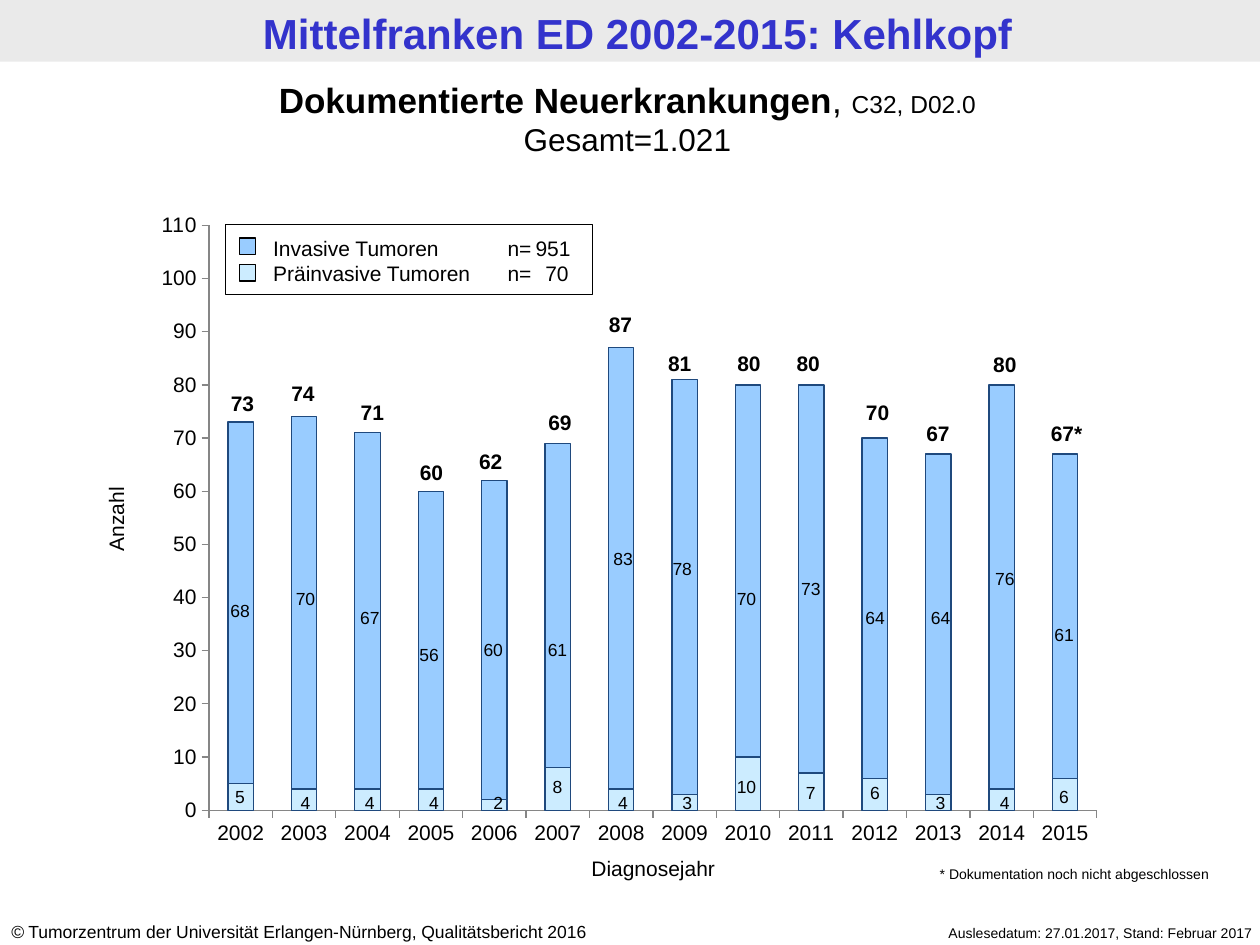
from lxml import etree
from pptx import Presentation
from pptx.chart.data import CategoryChartData
from pptx.dml.color import RGBColor
from pptx.enum.chart import XL_CHART_TYPE, XL_TICK_MARK
from pptx.enum.shapes import MSO_SHAPE
from pptx.enum.text import MSO_ANCHOR, PP_ALIGN
from pptx.oxml import parse_xml
from pptx.oxml.ns import nsdecls, qn
from pptx.util import Inches, Pt

STACKED = XL_CHART_TYPE.COLUMN_STACKED
OUT = XL_TICK_MARK.OUTSIDE
RECT = MSO_SHAPE.RECTANGLE
TOP, BOTTOM = MSO_ANCHOR.TOP, MSO_ANCHOR.BOTTOM
LEFT, MID, RIGHT = PP_ALIGN.LEFT, PP_ALIGN.CENTER, PP_ALIGN.RIGHT

FONT = "Arial"
BLACK = RGBColor(0x00, 0x00, 0x00)
BLUE = RGBColor(0x33, 0x33, 0xCC)
BAND = RGBColor(0xEA, 0xEA, 0xEA)
NAVY = RGBColor(0x1F, 0x49, 0x7D)
GREY = RGBColor(0x86, 0x86, 0x86)
SKY = RGBColor(0x99, 0xCC, 0xFF)
PALE = RGBColor(0xCC, 0xEC, 0xFF)

# Preinvasive and invasive counts, total, then (left, top) of their labels
YEARS = {
    2002: (5, 68, "73", (1.69, 6.19), (1.69, 4.71), (1.61, 3.05)),
    2003: (4, 70, "74", (2.21, 6.24), (2.21, 4.62), (2.09, 2.97)),
    2004: (4, 67, "71", (2.72, 6.24), (2.72, 4.77), (2.64, 3.12)),
    2005: (4, 56, "60", (3.23, 6.24), (3.19, 5.06), (3.11, 3.60)),
    2006: (2, 60, "62", (3.74, 6.24), (3.70, 5.02), (3.58, 3.51)),
    2007: (8, 61, "69", (4.21, 6.11), (4.21, 5.02), (4.13, 3.20)),
    2008: (4, 83, "87", (4.73, 6.24), (4.73, 4.30), (4.61, 2.42)),
    2009: (3, 78, "81", (5.24, 6.24), (5.20, 4.38), (5.08, 2.73)),
    2010: (10, 70, "80", (5.71, 6.11), (5.71, 4.62), (5.63, 2.73)),
    2011: (7, 73, "80", (6.22, 6.16), (6.22, 4.54), (6.10, 2.73)),
    2012: (6, 64, "70", (6.73, 6.16), (6.73, 4.77), (6.65, 3.12)),
    2013: (3, 64, "67", (7.25, 6.24), (7.25, 4.77), (7.13, 3.29)),
    2014: (4, 76, "80", (7.76, 6.24), (7.76, 4.46), (7.66, 2.74)),
    2015: (6, 61, "67*", (8.23, 6.19), (8.23, 4.90), (8.15, 3.29)),
}


def inches(*nums):
    return [Inches(n) for n in nums]


def set_tabs(para, stops):
    tabs = etree.SubElement(para._p.get_or_add_pPr(), qn("a:tabLst"))
    for pos, side in stops:
        etree.SubElement(tabs, qn("a:tab"), pos=str(Inches(pos)), algn=side)


def write(para, text, size=12, bold=False, italic=False, color=BLACK,
          align=LEFT, tabs=()):
    """Add a formatted run to a paragraph."""
    para.alignment = align
    if tabs:
        set_tabs(para, tabs)
    run = para.add_run()
    run.text = text
    font = run.font
    font.name, font.size = FONT, Pt(size)
    font.bold, font.italic = bold, italic
    font.color.rgb = color


def add_box(slide, *place, turn=0):
    """Add an empty text box and return its first paragraph."""
    box = slide.shapes.add_textbox(*inches(*place))
    box.rotation = turn
    frame = box.text_frame
    frame.word_wrap = True
    frame.vertical_anchor = TOP
    return frame.paragraphs[0]


def add_rect(slide, *place, fill=None, line=None):
    rect = slide.shapes.add_shape(RECT, *inches(*place))
    rect.shadow.inherit = False
    if fill is None:
        rect.fill.background()
    else:
        rect.fill.solid()
        rect.fill.fore_color.rgb = fill
    if line is None:
        rect.line.fill.background()
    else:
        rect.line.color.rgb = line
        rect.line.width = Pt(0.75)
    return rect


def add_head(slide):
    # The band lies behind the title
    band = add_rect(slide, 0, 0, 10, 0.49, fill=BAND)
    slide.shapes._spTree.insert(2, band._element)
    title = slide.shapes.title
    title.left, title.top, title.width, title.height = inches(0.06, 0.01, 10, 0.49)
    frame = title.text_frame
    frame.margin_left, frame.margin_top = inches(0.09, 0.04)
    frame.margin_right, frame.margin_bottom = inches(0.09, 0.04)
    frame.vertical_anchor = BOTTOM
    write(frame.paragraphs[0], "Mittelfranken ED 2002-2015: Kehlkopf",
          size=24, bold=True, color=BLUE, align=MID)


def add_bars(slide):
    data = CategoryChartData()
    data.categories = [str(year) for year in YEARS]
    for i, name in enumerate(("Präinvasive Tumoren", "Invasive Tumoren")):
        data.add_series(name, [row[i] for row in YEARS.values()])
    place = inches(1.15, 1.64, 7.71, 5.14)
    chart = slide.shapes.add_chart(STACKED, *place, data).chart
    chart.has_legend = chart.has_title = False
    chart.font.name, chart.font.size = FONT, Pt(12)
    chart.font.color.rgb = BLACK

    plot = chart.plots[0]
    plot.gap_width, plot.overlap = 150, 100
    plot.vary_by_categories = False
    for series, fill in zip(plot.series, (PALE, SKY)):
        form = series.format
        form.fill.solid()
        form.fill.fore_color.rgb = fill
        form.line.color.rgb = NAVY
        form.line.width = Pt(0.75)

    for axis in (chart.category_axis, chart.value_axis):
        axis.has_major_gridlines = False
        axis.major_tick_mark = OUT
        axis.format.line.color.rgb = GREY
    scale = chart.value_axis
    scale.minimum_scale, scale.maximum_scale, scale.major_unit = 0, 110, 10

    # Fixed inner plot area
    area = chart._chartSpace.chart.plotArea
    for old in area.findall(qn("c:layout")):
        area.remove(old)
    parts = '<c:layoutTarget val="inner"/><c:xMode val="edge"/><c:yMode val="edge"/>'
    for key, val in zip("xywh", (0.066, 0.029, 0.914, 0.903)):
        parts += f'<c:{key} val="{val}"/>'
    area.insert(0, parse_xml(
        f'<c:layout {nsdecls("c")}><c:manualLayout>{parts}</c:manualLayout></c:layout>'))


def add_key(slide):
    para = add_box(slide, 2.07, 1.82, 2.86, 0.5)
    start, end = [(1.47, "l"), (1.86, "l")], [(2.75, "l"), (4.41, "l")]
    write(para, "Invasive Tumoren\t\tn=\t951", tabs=start + [(2.36, "r")] + end)
    para = para._parent.add_paragraph()
    write(para, "Präinvasive Tumoren\tn=\t70", tabs=start + [(2.16, "l")] + end)
    add_rect(slide, 1.79, 1.78, 2.91, 0.56, line=BLACK)
    for top, fill in ((1.89, SKY), (2.1, PALE)):
        add_rect(slide, 1.9, top, 0.13, 0.13, fill=fill, line=BLACK)


def add_counts(slide):
    for low, high, total, *spots in YEARS.values():
        for count, spot in zip((low, high), spots):
            write(add_box(slide, *spot, 0.43, 0.27), str(count), size=10, align=MID)
        write(add_box(slide, *spots[2], 0.63, 0.3), total, bold=True, align=MID)


def add_notes(slide):
    # Source line, date and footnote
    para = add_box(slide, -0.01, 7.26, 5.24, 0.27)
    write(para, "©", size=10, italic=True)
    write(para, " Tumorzentrum der Universität Erlangen-Nürnberg, "
          "Qualitätsbericht 2016", size=10)
    write(add_box(slide, 6.65, 7.29, 3.39, 0.24),
          "Auslesedatum: 27.01.2017, Stand: Februar 2017", size=8, align=RIGHT)
    write(add_box(slide, 7.36, 6.82, 2.7, 0.24),
          "* Dokumentation noch nicht abgeschlossen", size=8)


def main():
    deck = Presentation()
    deck.slide_width, deck.slide_height = inches(10, 7.5)
    slide = deck.slides.add_slide(deck.slide_layouts[5])
    add_head(slide)
    add_bars(slide)

    # Chart heading
    para = add_box(slide, -0.04, 0.57, 10.04, 0.74)
    write(para, "Dokumentierte Neuerkrankungen", size=20, bold=True, align=MID)
    write(para, ", ", size=20, align=MID)
    write(para, "C32, D02.0", size=14, align=MID)
    write(para._parent.add_paragraph(), "Gesamt=1.021", size=18, align=MID)

    # Axis names
    write(add_box(slide, 4.06, 6.74, 2.25, 0.3), "Diagnosejahr", align=MID)
    write(add_box(slide, 0.31, 3.97, 1.22, 0.3, turn=270), "Anzahl", align=MID)

    add_key(slide)
    add_counts(slide)
    add_notes(slide)
    deck.save("out.pptx")


if __name__ == "__main__":
    main()
